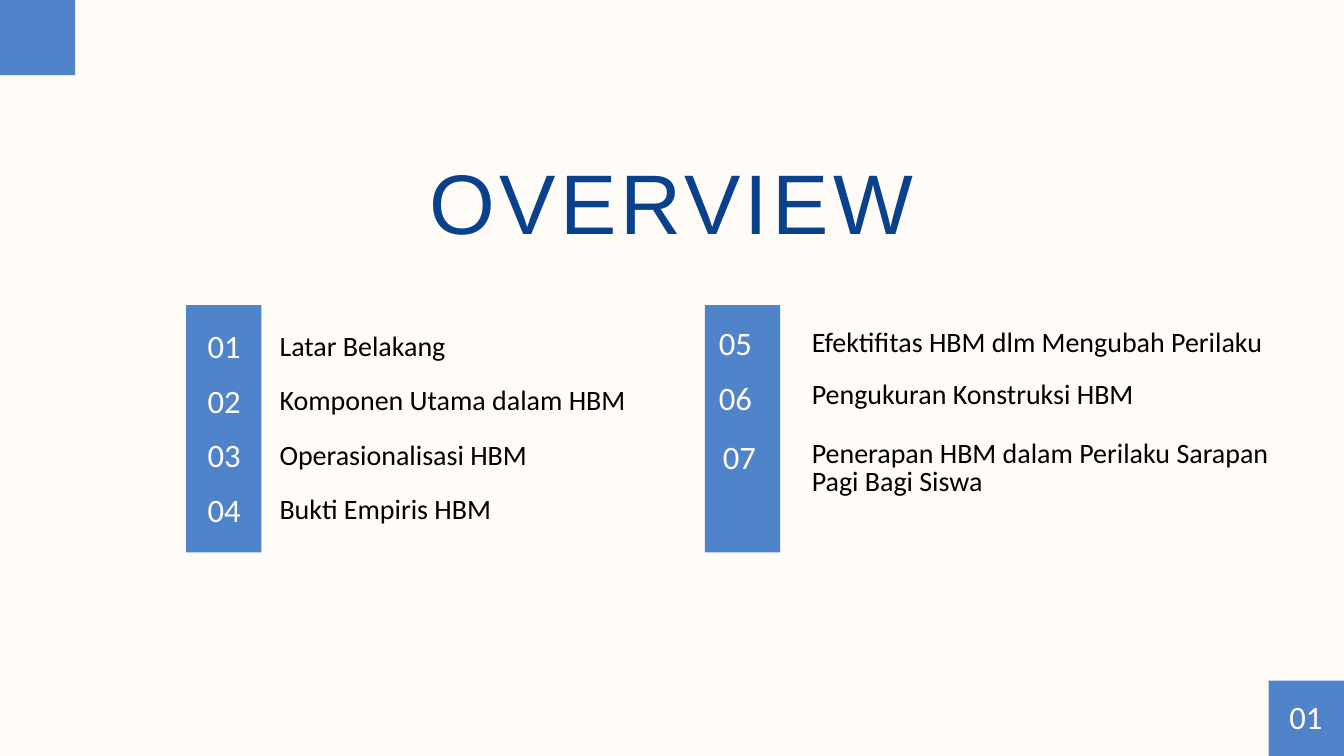
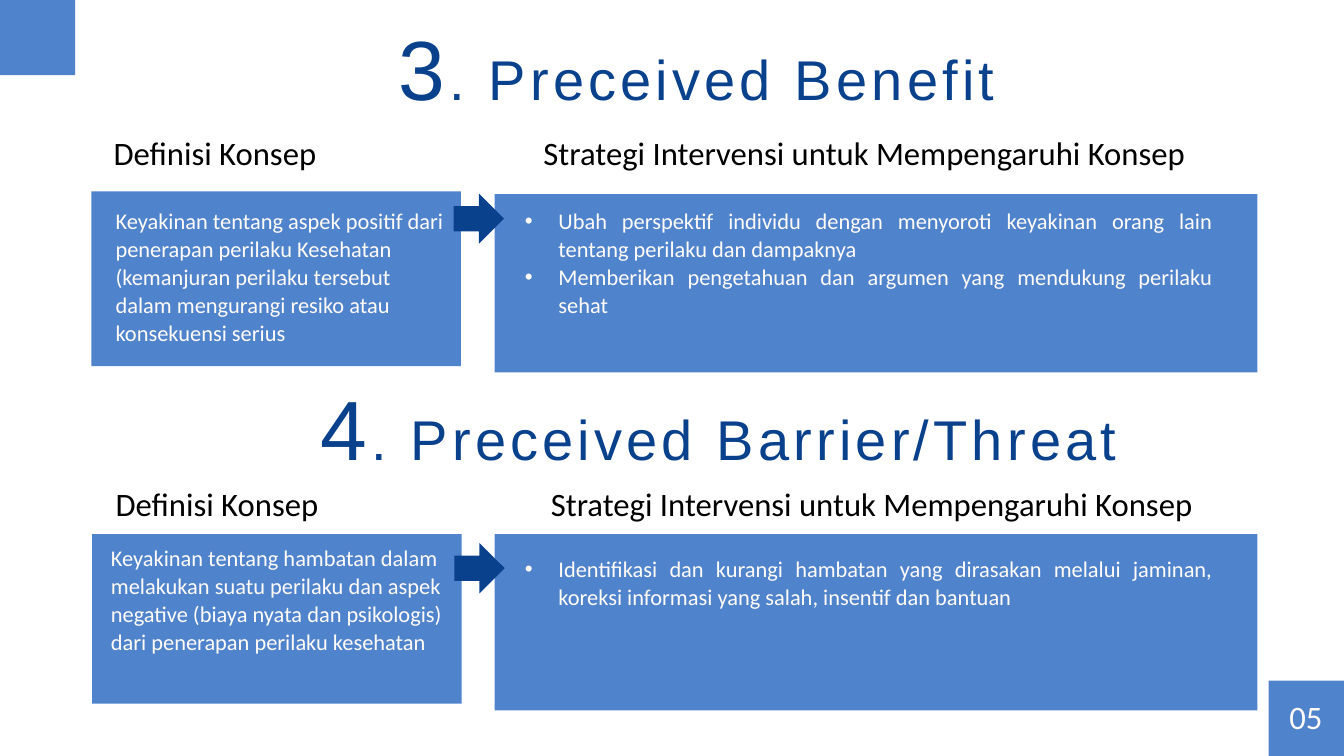
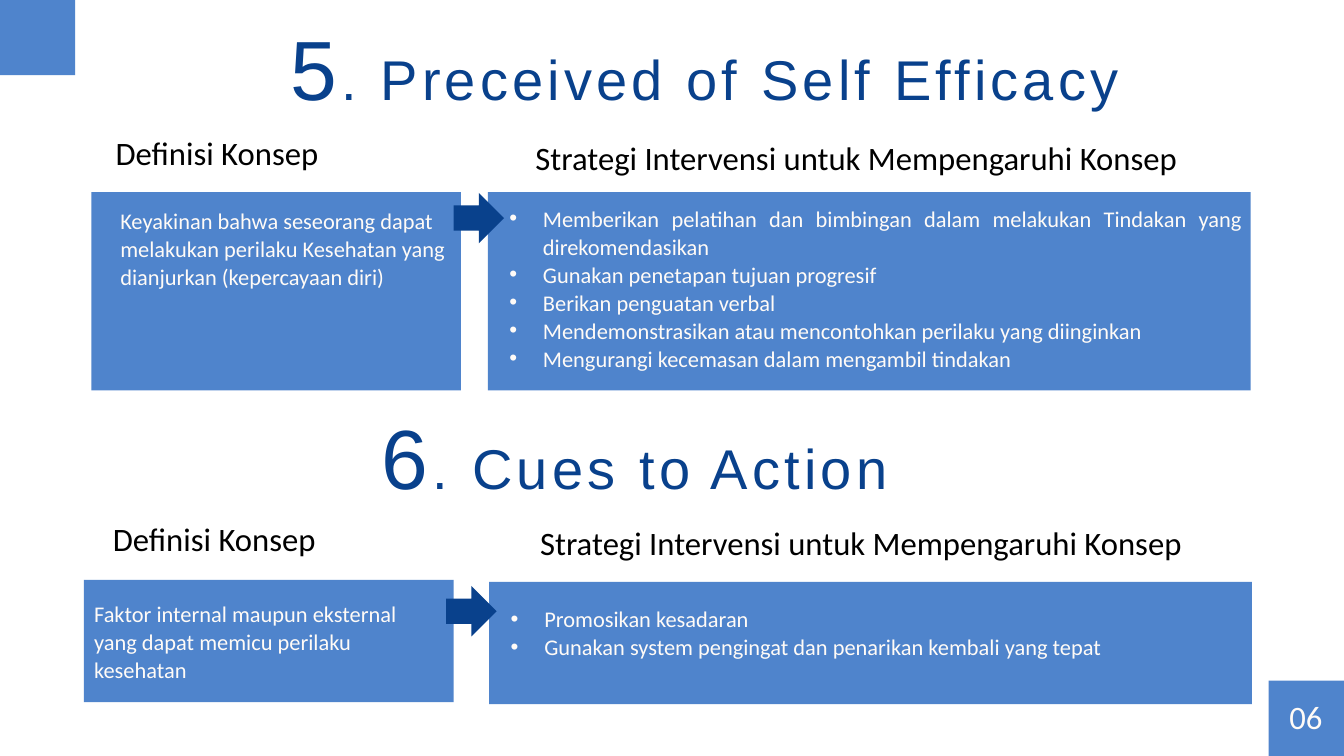
from dataclasses import dataclass

from lxml import etree
from pptx import Presentation
from pptx.dml.color import RGBColor
from pptx.enum.shapes import MSO_SHAPE
from pptx.enum.text import MSO_ANCHOR, MSO_AUTO_SIZE, PP_ALIGN
from pptx.oxml.ns import qn
from pptx.util import Inches, Pt

RECTANGLE, RIGHT_ARROW = MSO_SHAPE.RECTANGLE, MSO_SHAPE.RIGHT_ARROW
TOP, NO_AUTOFIT = MSO_ANCHOR.TOP, MSO_AUTO_SIZE.NONE
LEFT, CENTER, JUSTIFY = PP_ALIGN.LEFT, PP_ALIGN.CENTER, PP_ALIGN.JUSTIFY

SLIDE_W, SLIDE_H = 20, 11.25
CORNER = 1.12
TWO_CONTENT = 3
PANEL_W, DEFINITION_W, STRATEGY_W = 1.12, 5.5, 11.35
NUMBER_W, NUMBER_H = 0.93, 0.5
TITLE_W, TITLE_H = 13.9, 1.29


@dataclass(frozen=True)
class Style:
    size: float
    line: float
    color: RGBColor
    font: str = "Calibri"
    align: PP_ALIGN = LEFT
    tracking: float = 0


class Theme:
    CREAM = RGBColor.from_string("FFFBF7")
    WHITE = RGBColor.from_string("FFFFFF")
    BLACK = RGBColor.from_string("000000")
    NAVY = RGBColor.from_string("09418C")
    BLUE = RGBColor.from_string("155CBB")
    PANEL_OPACITY = 75

    OVERVIEW_TITLE = Style(90.6, 90.6, NAVY, "Arial", CENTER, 4.5)
    CONCEPT_TITLE = Style(90, 90.6, NAVY, "Arial", CENTER, 4.5)
    CONCEPT_NAME_SIZE = 60
    AGENDA = Style(30, 30, BLACK)
    NUMBER = Style(35, 35, CREAM, align=CENTER)
    HEADING = Style(35, 35, BLACK, align=CENTER)
    DEFINITION = Style(24, 30, CREAM)
    STRATEGY = Style(24, 30, CREAM, align=JUSTIFY)


@dataclass(frozen=True)
class AgendaItem:
    """Tops and number_left are measured from the column's panel."""
    number: str
    label: str
    label_top: float
    number_top: float
    number_left: float


@dataclass(frozen=True)
class AgendaColumn:
    box: tuple
    label_left: float
    label_width: float
    items: list


@dataclass(frozen=True)
class Concept:
    """Every position is an offset from the corner of the definition box."""
    number: str
    name: str
    definition: str
    strategies: list
    box: tuple
    title_at: tuple
    definition_at: tuple
    definition_width: float
    definition_heading_at: tuple
    strategy_panel_at: tuple
    strategy_height: float
    strategy_heading_at: tuple
    strategies_at: tuple
    strategies_width: float
    arrow_top: float


def add_block(slide, kind, box, color, opacity=100):
    block = slide.shapes.add_shape(kind, *map(Inches, box))
    block.shadow.inherit = False
    block.fill.solid()
    block.fill.fore_color.rgb = color
    block.line.fill.background()
    if opacity < 100:
        tint = block.fill._xPr.find(".//" + qn("a:srgbClr"))
        etree.SubElement(tint, qn("a:alpha"), val=str(opacity * 1000))


def add_panel(slide, box):
    add_block(slide, RECTANGLE, box, Theme.BLUE, Theme.PANEL_OPACITY)


def add_box(slide, box):
    return slide.shapes.add_textbox(*map(Inches, box))


def move_to_front(placeholder, box):
    """Give a placeholder its box and lift it above the panels drawn so far."""
    placeholder.left, placeholder.top, placeholder.width, placeholder.height = map(Inches, box)
    placeholder._element.getparent().append(placeholder._element)
    return placeholder


def set_bullet(paragraph, bullet, indent=0.5):
    properties = paragraph._p.get_or_add_pPr()
    hang = Inches(indent) if bullet else 0
    properties.set("marL", str(hang))
    properties.set("indent", str(-hang))
    if bullet:
        etree.SubElement(properties, qn("a:buFont"), typeface="Arial")
        etree.SubElement(properties, qn("a:buChar"), char=bullet)
    else:
        etree.SubElement(properties, qn("a:buNone"))


def write(holder, paragraphs, style, bullet=None, gaps=None):
    """Fill holder; a paragraph is a list of (text, size) runs, gaps are points before each."""
    frame = holder.text_frame
    frame.word_wrap = True
    frame.auto_size = NO_AUTOFIT
    frame.vertical_anchor = TOP
    frame.margin_left = frame.margin_right = frame.margin_top = frame.margin_bottom = 0
    for index, runs in enumerate(paragraphs):
        paragraph = frame.add_paragraph() if index else frame.paragraphs[0]
        paragraph.alignment = style.align
        paragraph.line_spacing = Pt(style.line)
        paragraph.space_before = Pt(gaps[index] if gaps else 0)
        paragraph.space_after = Pt(0)
        set_bullet(paragraph, bullet)
        for text, size in runs:
            run = paragraph.add_run()
            run.text = text
            run.font.name = style.font
            run.font.size = Pt(size)
            run.font.color.rgb = style.color
            if style.tracking:
                run._r.get_or_add_rPr().set("spc", str(int(style.tracking * 100)))


def write_lines(holder, lines, style, **options):
    write(holder, [[(line, style.size)] for line in lines], style, **options)


def add_slide(deck, background):
    slide = deck.slides.add_slide(deck.slide_layouts[TWO_CONTENT])
    slide.background.fill.solid()
    slide.background.fill.fore_color.rgb = background
    return slide


def add_corners(slide, page):
    left, top = SLIDE_W - CORNER, SLIDE_H - CORNER
    add_panel(slide, (0, 0, CORNER, CORNER))
    add_panel(slide, (left, top, CORNER, CORNER))
    number = add_box(slide, (left + 0.09, top + 0.34, NUMBER_W, NUMBER_H))
    write_lines(number, [page], Theme.NUMBER)


def add_agenda_column(slide, column, list_holder):
    left, top, _, height = column.box
    add_panel(slide, column.box)
    for item in column.items:
        number = add_box(slide, (left + item.number_left, top + item.number_top,
                                 NUMBER_W, NUMBER_H))
        write_lines(number, [item.number], Theme.NUMBER)
    tops = [item.label_top for item in column.items]
    gaps = [0] + [(after - before) * 72 - Theme.AGENDA.line
                  for before, after in zip(tops, tops[1:])]
    move_to_front(list_holder, (left + column.label_left, top + tops[0],
                                column.label_width, height - tops[0]))
    write_lines(list_holder, [item.label for item in column.items], Theme.AGENDA, gaps=gaps)


def build_overview(deck, page, columns):
    slide = add_slide(deck, Theme.CREAM)
    title, *lists = slide.placeholders
    move_to_front(title, (5.35, 2.49, 9.29, 1.31))
    write_lines(title, ["OVERVIEW"], Theme.OVERVIEW_TITLE)
    for column, list_holder in zip(columns, lists):
        add_agenda_column(slide, column, list_holder)
    add_corners(slide, page)


def add_concept(slide, concept, title, list_holder):
    """Place one concept; without a title placeholder its title is a text box."""
    left, top, _, _ = concept.box

    def place(offset, width, height):
        return left + offset[0], top + offset[1], width, height

    add_panel(slide, concept.box)
    add_panel(slide, place(concept.strategy_panel_at, STRATEGY_W, concept.strategy_height))
    add_block(slide, RIGHT_ARROW, place((5.39, concept.arrow_top), 0.75, 0.75), Theme.NAVY)

    title_box = place(concept.title_at, TITLE_W, TITLE_H)
    title = move_to_front(title, title_box) if title else add_box(slide, title_box)
    write(title, [[(concept.number, Theme.CONCEPT_TITLE.size),
                   (f". {concept.name}", Theme.CONCEPT_NAME_SIZE)]], Theme.CONCEPT_TITLE)

    for heading, offset, width in (
            ("Definisi Konsep", concept.definition_heading_at, 3.66),
            ("Strategi Intervensi untuk Mempengaruhi Konsep",
             concept.strategy_heading_at, STRATEGY_W)):
        write_lines(add_box(slide, place(offset, width, 0.49)), [heading], Theme.HEADING)

    definition = add_box(slide, place(concept.definition_at, concept.definition_width, 2.08))
    write_lines(definition, [concept.definition], Theme.DEFINITION)
    strategies_height = concept.strategy_height - concept.strategies_at[1]
    move_to_front(list_holder, place(concept.strategies_at, concept.strategies_width,
                                     strategies_height))
    write_lines(list_holder, concept.strategies, Theme.STRATEGY, bullet="•")


def build_concepts(deck, page, concepts):
    slide = add_slide(deck, Theme.WHITE)
    title, *lists = slide.placeholders
    for concept, heading, list_holder in zip(concepts, (title, None), lists):
        add_concept(slide, concept, heading, list_holder)
    add_corners(slide, page)


FIRST_LABELS = ["Latar Belakang", "Komponen Utama dalam HBM",
                "Operasionalisasi HBM", "Bukti Empiris HBM"]
AGENDA_COLUMNS = [
    AgendaColumn((2.77, 4.54, PANEL_W, 3.68), 1.39, 6.12, [
        AgendaItem(f"{row + 1:02}", label, 0.43 + 0.81 * row, 0.41 + 0.81 * row, 0.1)
        for row, label in enumerate(FIRST_LABELS)]),
    AgendaColumn((10.49, 4.54, PANEL_W, 3.68), 1.59, 7.42, [
        AgendaItem("05", "Efektifitas HBM dlm Mengubah Perilaku", 0.37, 0.36, -0.01),
        AgendaItem("06", "Pengukuran Konstruksi HBM", 1.15, 1.18, -0.01),
        AgendaItem("07", "Penerapan HBM dalam Perilaku Sarapan Pagi Bagi Siswa",
                   2.02, 2.06, 0.05)]),
]

BENEFIT = Concept(
    "3", "Preceived Benefit",
    "Keyakinan tentang aspek positif dari penerapan perilaku Kesehatan (kemanjuran perilaku "
    "tersebut dalam mengurangi resiko atau konsekuensi serius",
    ["Ubah perspektif individu dengan menyoroti keyakinan orang lain tentang perilaku "
     "dan dampaknya",
     "Memberikan pengetahuan dan argumen yang mendukung perilaku sehat"],
    box=(1.36, 2.85, DEFINITION_W, 2.6), title_at=(2.06, -2.37),
    definition_at=(0.36, 0.22), definition_width=4.93, definition_heading_at=(0.01, -0.78),
    strategy_panel_at=(6, 0.04), strategy_height=2.65, strategy_heading_at=(5.83, -0.77),
    strategies_at=(6.45, 0.22), strategies_width=10.23, arrow_top=0.03)

BARRIER = Concept(
    "4", "Preceived Barrier/Threat",
    "Keyakinan tentang hambatan dalam melakukan suatu perilaku dan aspek negative (biaya "
    "nyata dan psikologis) dari penerapan perilaku kesehatan",
    ["Identifikasi dan kurangi hambatan yang dirasakan melalui jaminan, koreksi informasi "
     "yang salah, insentif dan bantuan"],
    box=(1.37, 7.95, DEFINITION_W, 2.52), title_at=(2.38, -2.1),
    definition_at=(0.28, 0.13), definition_width=5.21, definition_heading_at=(0.03, -0.66),
    strategy_panel_at=(5.99, 0), strategy_height=2.62, strategy_heading_at=(5.93, -0.66),
    strategies_at=(6.44, 0.3), strategies_width=10.23, arrow_top=0.13)

SELF_EFFICACY = Concept(
    "5", "Preceived of Self Efficacy",
    "Keyakinan bahwa seseorang dapat melakukan perilaku Kesehatan yang dianjurkan "
    "(kepercayaan diri)",
    ["Memberikan pelatihan dan bimbingan dalam melakukan Tindakan yang direkomendasikan",
     "Gunakan penetapan tujuan progresif",
     "Berikan penguatan verbal",
     "Mendemonstrasikan atau mencontohkan perilaku yang diinginkan",
     "Mengurangi kecemasan dalam mengambil tindakan"],
    box=(1.36, 2.86, DEFINITION_W, 2.95), title_at=(2.18, -2.38),
    definition_at=(0.43, 0.21), definition_width=4.9, definition_heading_at=(0.04, -0.79),
    strategy_panel_at=(5.9, 0), strategy_height=2.95, strategy_heading_at=(5.71, -0.71),
    strategies_at=(6.22, 0.17), strategies_width=10.9, arrow_top=0.01)

CUES = Concept(
    "6", "Cues to Action",
    "Faktor internal maupun eksternal yang dapat memicu perilaku kesehatan",
    ["Promosikan kesadaran",
     "Gunakan system pengingat dan penarikan kembali yang tepat"],
    box=(1.25, 8.63, DEFINITION_W, 1.82), title_at=(1.25, -2.36),
    definition_at=(0.15, 0.28), definition_width=4.62, definition_heading_at=(0.11, -0.81),
    strategy_panel_at=(6.03, 0.03), strategy_height=1.82, strategy_heading_at=(5.89, -0.76),
    strategies_at=(6.35, 0.36), strategies_width=10.23, arrow_top=0.09)


def main():
    deck = Presentation()
    deck.slide_width, deck.slide_height = Inches(SLIDE_W), Inches(SLIDE_H)
    build_overview(deck, "01", AGENDA_COLUMNS)
    build_concepts(deck, "05", [BENEFIT, BARRIER])
    build_concepts(deck, "06", [SELF_EFFICACY, CUES])
    deck.save("out.pptx")


if __name__ == "__main__":
    main()
